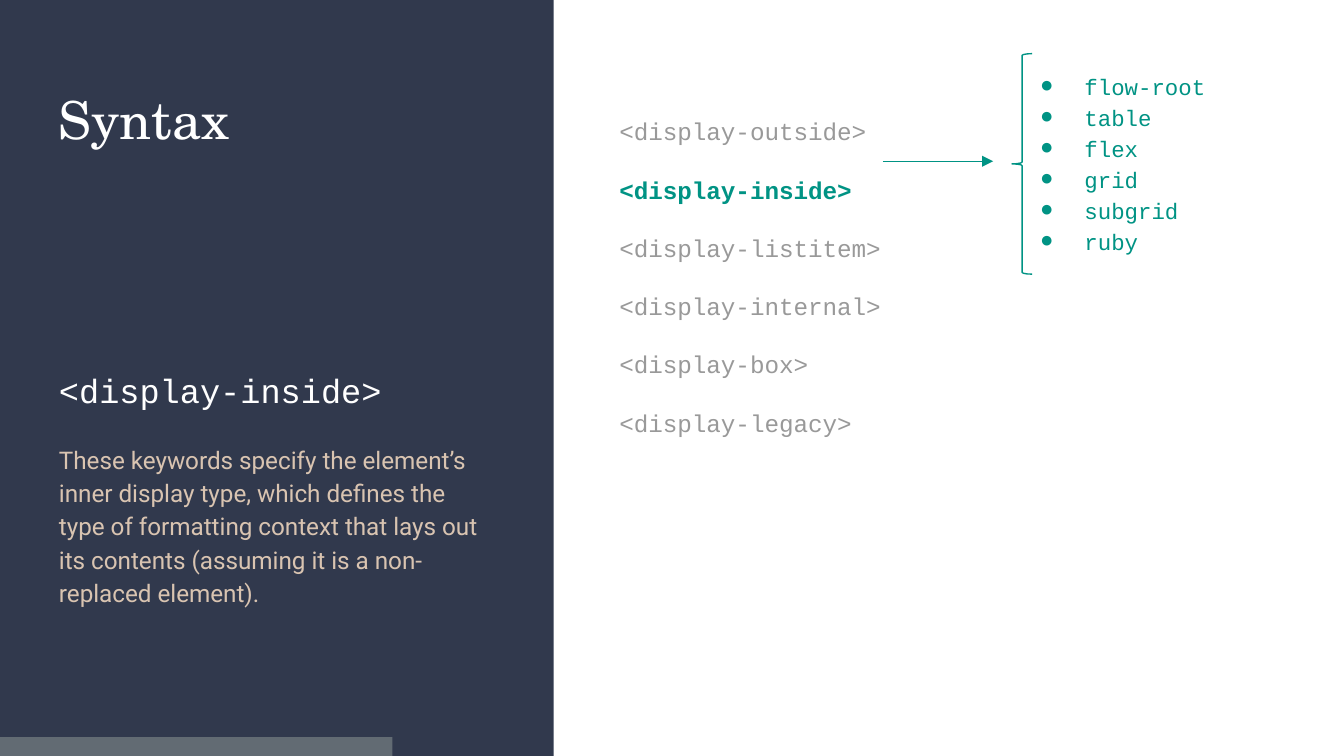
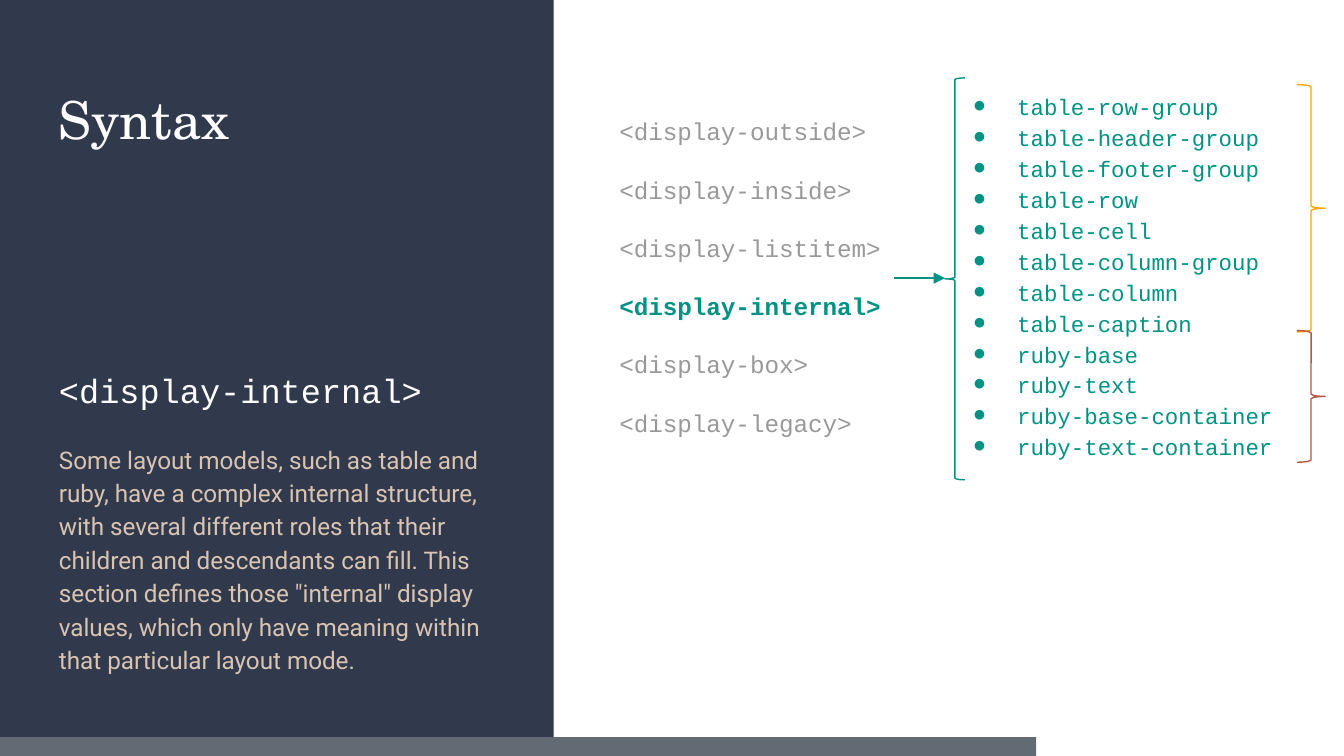
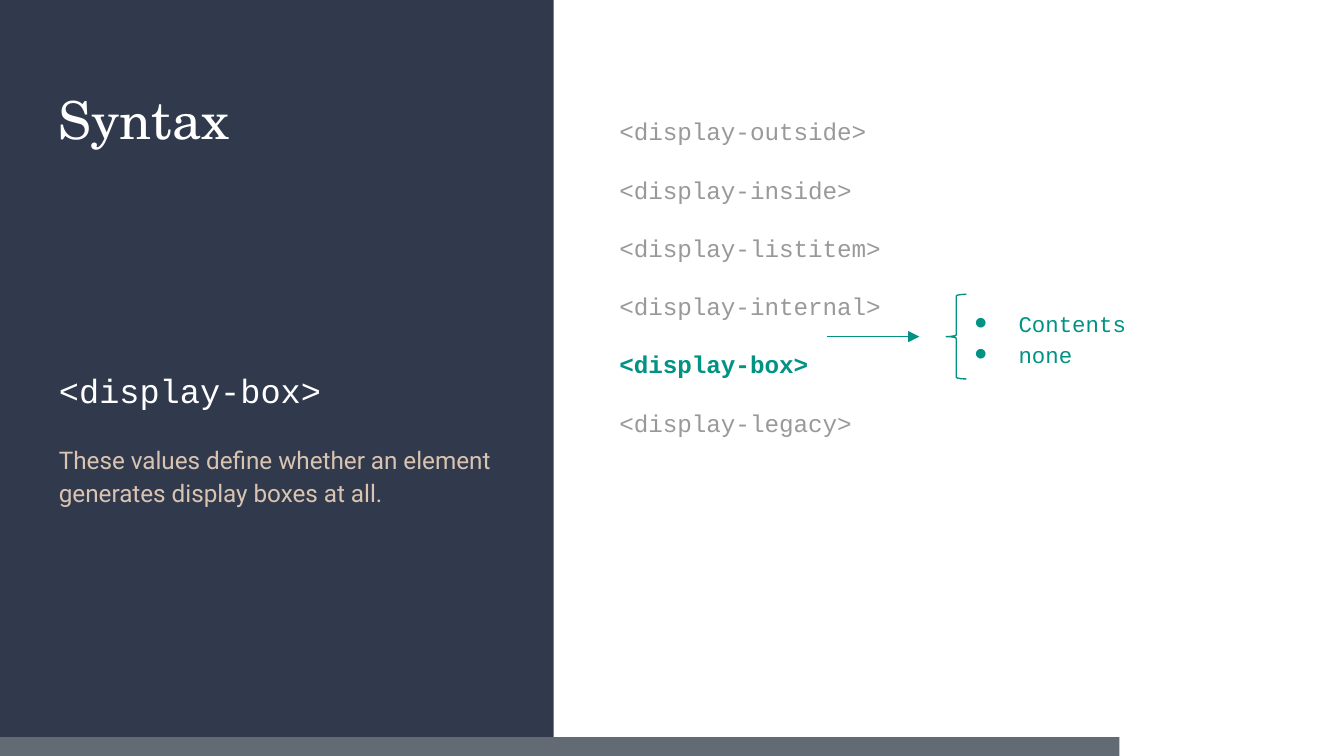
from copy import deepcopy

from lxml.etree import SubElement
from pptx import Presentation
from pptx.dml.color import RGBColor
from pptx.enum.shapes import MSO_CONNECTOR, MSO_SHAPE
from pptx.enum.text import MSO_ANCHOR
from pptx.oxml.ns import qn
from pptx.util import Inches, Pt

# Shared look
WHITE = RGBColor(0xFF, 0xFF, 0xFF)
NAVY = RGBColor(0x31, 0x39, 0x4D)
SAND = RGBColor(0xD9, 0xC4, 0xB1)
GRAY = RGBColor(0x99, 0x99, 0x99)
SLATE = RGBColor(0x62, 0x6B, 0x73)
TEAL = RGBColor(0x00, 0x93, 0x84)
ORANGE = RGBColor(0xFF, 0xA5, 0x00)
RUST = RGBColor(0xB8, 0x57, 0x41)
MONO, SANS, SERIF = "Courier New", "Roboto", "TeX Gyre Schola"

WIDTH, HEIGHT = 10, 5.625
PANEL_WIDTH = 4.12
TEXT_LEFT, TEXT_WIDTH = 0.34, 3.42
BAR_HEIGHT = 0.14
BRACE_OFFSET, BRACE_WIDTH = 0.06, 0.15
GROUP_LEFT, GROUP_WIDTH = 9.65, 0.21
# Arrow height for the first category, and the step between categories
ARROW_TOP, CATEGORY_STEP = 0.765, 0.435

# Content
TITLE = "Syntax"
CATEGORIES = [
    "<display-outside>", "<display-inside>", "<display-listitem>",
    "<display-internal>", "<display-box>", "<display-legacy>",
]
# list_box is left, top, width, height; brace is top, height;
# groups are top, height, colour; progress is a share of the slide width
SLIDES = [
    {
        "category": "<display-inside>",
        "description": "These keywords specify the element’s inner display type, "
                       "which defines the type of formatting context that lays out "
                       "its contents (assuming it is a non-replaced element).",
        "values": ["flow-root", "table", "flex", "grid", "subgrid", "ruby"],
        "list_box": (7.47, 0.31, 1.89, 1.79),
        "brace": (0.4, 1.64),
        "arrow": (6.57, 7.39),
        "groups": [],
        "progress": 0.292,
    },
    {
        "category": "<display-internal>",
        "description": "Some layout models, such as table and ruby, have a complex "
                       "internal structure, with several different roles that their "
                       "children and descendants can fill. This section defines "
                       "those \"internal\" display values, which only have meaning "
                       "within that particular layout mode.",
        "values": [
            "table-row-group", "table-header-group", "table-footer-group",
            "table-row", "table-cell", "table-column-group", "table-column",
            "table-caption", "ruby-base", "ruby-text", "ruby-base-container",
            "ruby-text-container",
        ],
        "list_box": (6.97, 0.42, 2.62, 3.25),
        "brace": (0.58, 2.99),
        "arrow": (6.65, 7.03),
        "groups": [(0.63, 1.84, ORANGE), (2.46, 0.98, RUST)],
        "progress": 0.771,
    },
    {
        "category": "<display-box>",
        "description": "These values define whether an element generates display "
                       "boxes at all.",
        "values": ["Contents", "none"],
        "list_box": (6.98, 2.16, 2.62, 0.69),
        "brace": (2.19, 0.63),
        "arrow": (6.15, 6.84),
        "groups": [],
        "progress": 0.833,
    },
]


# Drawing helpers
def add_bar(slide, left, top, width, height, color):
    shape = slide.shapes.add_shape(
        MSO_SHAPE.RECTANGLE, *map(Inches, (left, top, width, height)))
    shape.shadow.inherit = False
    shape.fill.solid()
    shape.fill.fore_color.rgb = color
    shape.line.fill.background()


def add_brace(slide, kind, left, top, width, height, color):
    brace = slide.shapes.add_shape(kind, *map(Inches, (left, top, width, height)))
    brace.shadow.inherit = False
    brace.fill.background()
    brace.line.color.rgb = color
    brace.line.width = Pt(0.75)


def add_arrow(slide, start, end, top):
    arrow = slide.shapes.add_connector(
        MSO_CONNECTOR.STRAIGHT, *map(Inches, (start, top, end, top)))
    arrow.line.color.rgb = TEAL
    arrow.line.width = Pt(0.75)
    SubElement(arrow.line._get_or_add_ln(), qn("a:tailEnd"), type="triangle")
    SubElement(arrow._element.spPr, qn("a:effectLst"))


def add_text_frame(slide, left, top, width, height, anchor=MSO_ANCHOR.TOP):
    box = slide.shapes.add_textbox(*map(Inches, (left, top, width, height)))
    frame = box.text_frame
    frame.word_wrap = True
    frame.vertical_anchor = anchor
    frame.margin_left = frame.margin_right = Inches(0.1)
    frame.margin_top = frame.margin_bottom = Inches(0.1)
    return frame


def add_run(paragraph, text, size, font, color, bold=False):
    run = paragraph.add_run()
    run.text = text
    run.font.size = Pt(size)
    run.font.name = font
    run.font.color.rgb = color
    run.font.bold = bold
    return run


def add_break_after(paragraph, run):
    """Break the line, keeping the size and font of the run before it."""
    paragraph.add_line_break()
    paragraph._p[-1].append(deepcopy(run._r.rPr))


def add_bullet(paragraph):
    properties = paragraph._p.get_or_add_pPr()
    properties.set("marL", str(Inches(0.5)))
    properties.set("indent", str(Inches(-0.33)))
    color = SubElement(properties, qn("a:buClr"))
    SubElement(color, qn("a:srgbClr"), val=str(TEAL))
    SubElement(properties, qn("a:buFont"), typeface=MONO)
    SubElement(properties, qn("a:buChar"), char="●")


# Parts of a slide
def add_left_panel(slide, content):
    add_bar(slide, 0, 0, PANEL_WIDTH, HEIGHT, NAVY)
    title = add_text_frame(slide, TEXT_LEFT, 0.55, TEXT_WIDTH, 2)
    add_run(title.paragraphs[0], TITLE, 28, SERIF, WHITE)

    body = add_text_frame(slide, TEXT_LEFT, 2.61, TEXT_WIDTH, 2.51)
    heading = body.paragraphs[0]
    heading.line_spacing = 1.15
    add_run(heading, content["category"], 18, MONO, WHITE)
    description = body.add_paragraph()
    description.line_spacing = 1.15
    description.space_before = description.space_after = Pt(16)
    add_run(description, content["description"], 13, SANS, SAND)


def add_categories(slide, selected):
    paragraph = add_text_frame(slide, 4.51, 0.55, 2.47, 4.7).paragraphs[0]
    paragraph.line_spacing = 2.0
    paragraph.space_after = Pt(16)
    for category in CATEGORIES:
        active = category == selected
        run = add_run(paragraph, category, 13, MONO, TEAL if active else GRAY, active)
        if category != CATEGORIES[-1]:
            add_break_after(paragraph, run)


def add_values(slide, content):
    arrow_top = ARROW_TOP + CATEGORY_STEP * CATEGORIES.index(content["category"])
    add_arrow(slide, *content["arrow"], arrow_top)

    frame = add_text_frame(slide, *content["list_box"], anchor=MSO_ANCHOR.MIDDLE)
    for index, value in enumerate(content["values"]):
        paragraph = frame.add_paragraph() if index else frame.paragraphs[0]
        paragraph.line_spacing = 1.15
        add_bullet(paragraph)
        add_run(paragraph, value, 12, MONO, TEAL)

    top, height = content["brace"]
    add_brace(slide, MSO_SHAPE.LEFT_BRACE, content["list_box"][0] + BRACE_OFFSET,
              top, BRACE_WIDTH, height, TEAL)
    for top, height, color in content["groups"]:
        add_brace(slide, MSO_SHAPE.RIGHT_BRACE, GROUP_LEFT, top, GROUP_WIDTH,
                  height, color)


def main():
    presentation = Presentation()
    presentation.slide_width = Inches(WIDTH)
    presentation.slide_height = Inches(HEIGHT)
    for content in SLIDES:
        slide = presentation.slides.add_slide(presentation.slide_layouts[6])
        add_left_panel(slide, content)
        add_categories(slide, content["category"])
        add_values(slide, content)
        # Progress bar
        add_bar(slide, 0, HEIGHT - BAR_HEIGHT, WIDTH * content["progress"],
                BAR_HEIGHT, SLATE)
    presentation.save("out.pptx")


if __name__ == "__main__":
    main()
